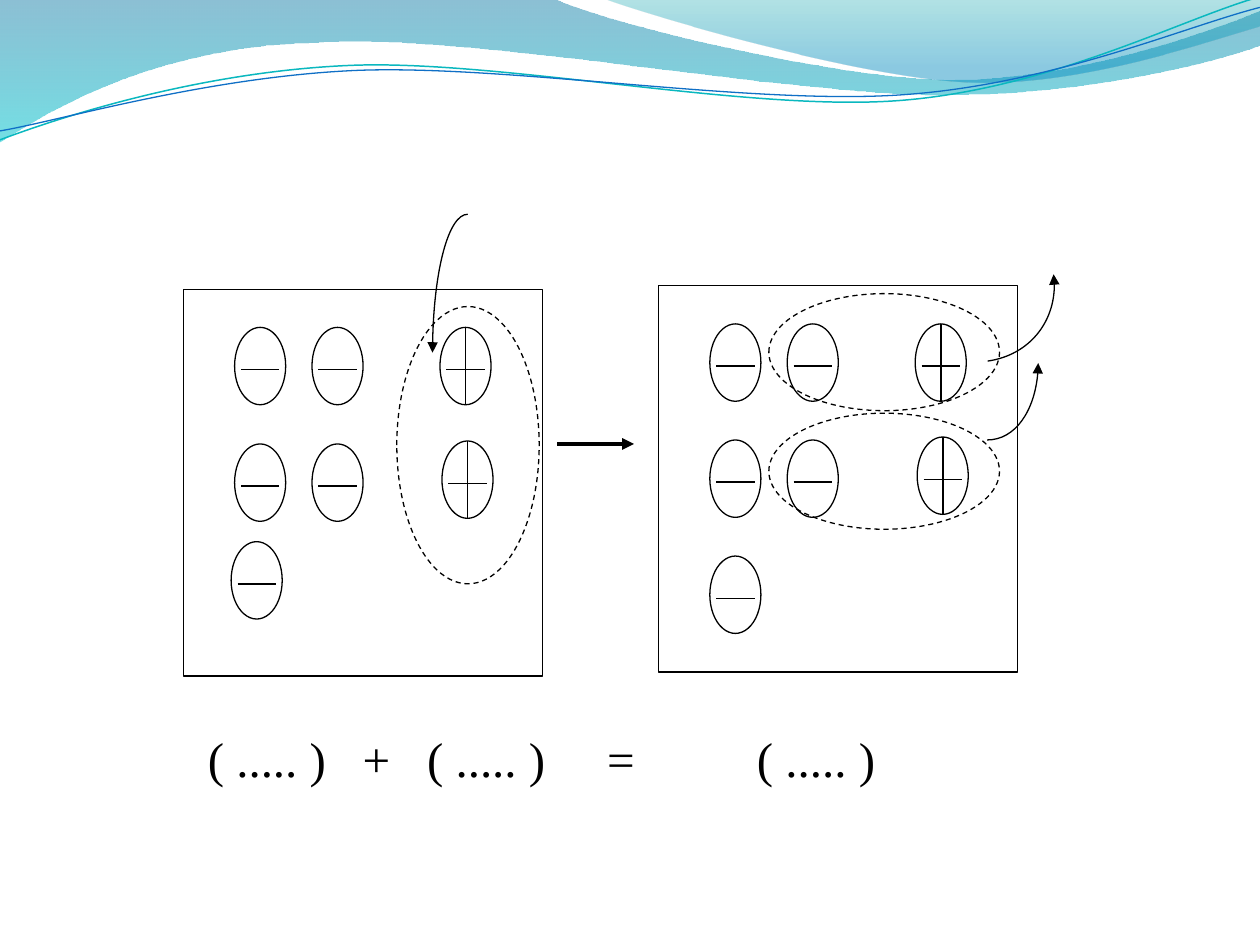
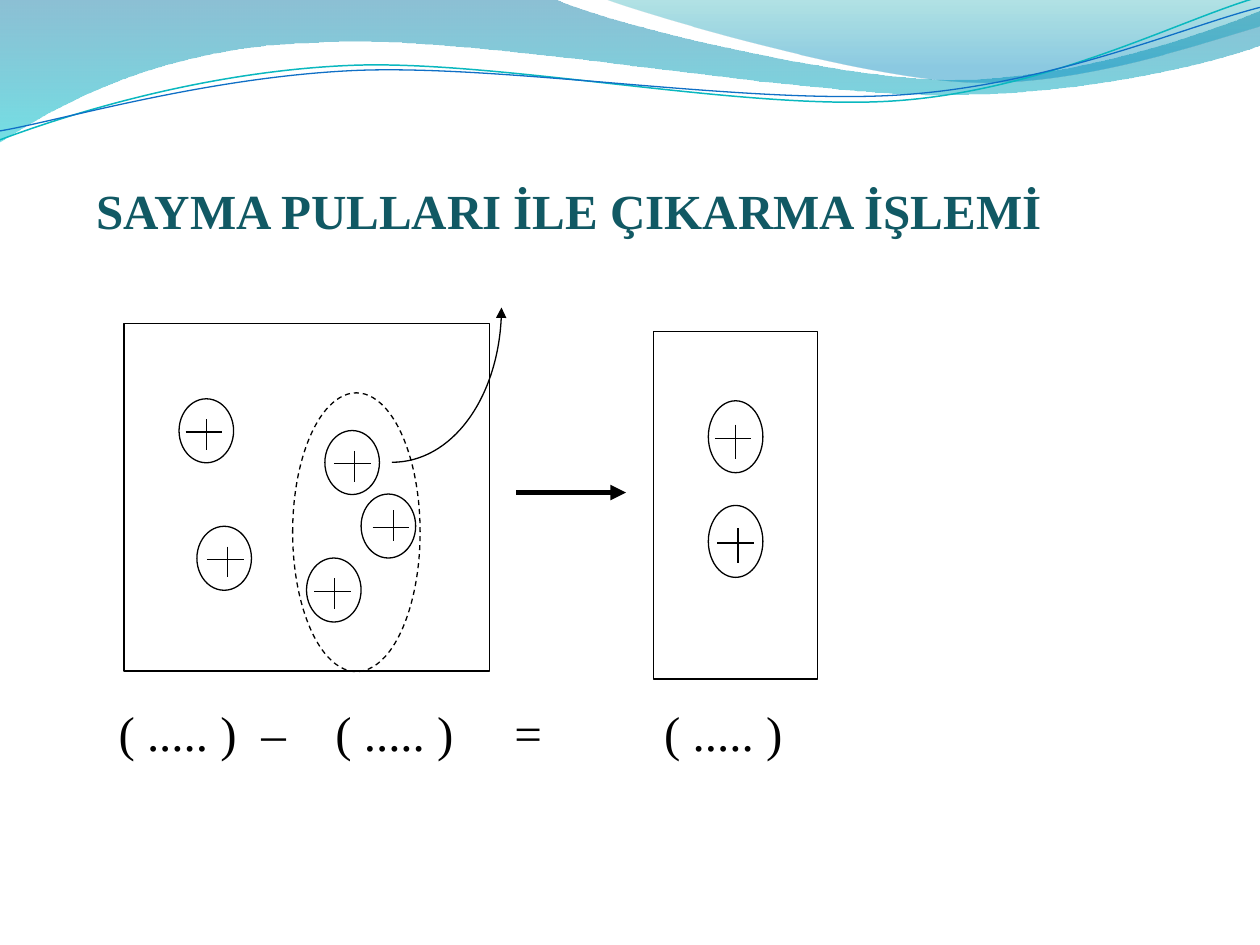
from lxml.etree import SubElement
from pptx import Presentation
from pptx.dml.color import RGBColor
from pptx.enum.dml import MSO_LINE
from pptx.enum.shapes import MSO_CONNECTOR, MSO_SHAPE
from pptx.enum.text import MSO_ANCHOR
from pptx.oxml.ns import qn
from pptx.util import Cm, Pt

COLORS = {
    "ink": "000000", "title": "115964",
    "deep": "0074A1", "turquoise": "00C6CF", "teal": "00A1A9", "sky": "008BBF",
    "teal line": "0AB8BF", "blue line": "0F6FC6",
}
FONT = "Times New Roman"


def add_curve(slide, start, segments, closed=False):
    """Draw segments of one point (straight) or three points (cubic Bézier)."""
    builder = slide.shapes.build_freeform(Cm(start[0]), Cm(start[1]), scale=1.0)
    builder.add_line_segments([(Cm(x), Cm(y)) for *_, (x, y) in segments], close=closed)
    shape = builder.convert_to_shape()
    shape.shadow.inherit = False
    shape.fill.background()
    pieces = list(shape._element.iter(qn("a:lnTo")))
    for piece, (*controls, _) in zip(pieces, segments):
        if controls:
            piece.tag = qn("a:cubicBezTo")
        for x, y in reversed(controls):
            point = SubElement(piece, qn("a:pt"),
                               x=str(Cm(x) - shape.left), y=str(Cm(y) - shape.top))
            piece.insert(0, point)
    return shape


def style_line(shape, color="ink", width=0.75, arrow=False, dashed=False):
    shape.line.color.rgb = RGBColor.from_string(COLORS[color])
    shape.line.width = Pt(width)
    if dashed:
        shape.line.dash_style = MSO_LINE.DASH
    if arrow:
        line = shape._element.spPr.find(qn("a:ln"))
        SubElement(line, qn("a:tailEnd"), type="triangle")


# Wave header: outline, then gradient stops (position, colour, opacity in %)
BANDS = [
    ((0, 0), [
        [(11.18, -0.02)],
        [(12.09, 0.43), (16.87, 1.6), (19.25, 1.6)],
        [(21.67, 1.6), (24.33, 0.66), (25.4, 0.23)],
        [(25.42, 0.91)],
        [(24.97, 1.12), (22.1, 1.93), (18.95, 1.91)],
        [(15.8, 1.91), (9.7, 0.71), (6.53, 0.86)],
        [(3.28, 0.91), (1.17, 2.11), (-0.02, 2.87)],
    ], [(0, "deep", 45), (1, "turquoise", 55)]),
    ((12.17, -0.02), [
        [(12.93, 0.28), (17.32, 1.57), (19.53, 1.65)],
        [(21.74, 1.75), (24.41, 0.81), (25.4, 0.53)],
        [(25.4, 0)],
    ], [(0, "teal", 30), (0.8, "sky", 45)]),
]
WAVE_LINES = [
    ((0, 2.82), [
        [(1.22, 2.36), (4.01, 1.45), (7.04, 1.32)],
        [(10.03, 1.19), (15.06, 2.26), (18.11, 2.03)],
        [(21.16, 1.8), (23.83, 0.38), (25.35, -0.05)],
    ], "teal line", 0.85),
    ((0, 2.64), [
        [(1.19, 2.44), (4.17, 1.55), (7.19, 1.42)],
        [(10.24, 1.3), (15.16, 2.13), (18.21, 1.91)],
        [(21.23, 1.7), (23.9, 0.53), (25.4, 0.15)],
    ], "blue line", 0.75),
]

# Counters: left, top, width, height and bars given from the counter's corner
minus_bar = (0.13, 0.85, 0.9, 0.85)
plus_bar = (0.52, 0, 0.52, 1.56)
addition_counters = []
for positions, bars in [
    ([(x, y) for x in (4.73, 6.29) for y in (6.6, 8.95)] + [(4.66, 10.92)], [minus_bar]),
    ([(x, y) for x in (14.31, 15.87) for y in (6.53, 8.87)] + [(14.31, 11.21)], [minus_bar]),
    ([(8.87, 6.6), (8.91, 8.89), (18.45, 6.53), (18.49, 8.81)], [minus_bar, plus_bar]),
]:
    addition_counters += [(x, y, 1.03, 1.56, bars) for x, y in positions]

# Here each plus sign sits a little off the counter's centre
subtraction_counters = []
for height, middle, top, length, positions in [
    (1.29, 0.67, 0.41, 0.62, [(3.61, 8.04, 0.13, 0), (6.55, 8.68, 0.18, 0),
                              (3.97, 10.61, 0.2, 0), (7.28, 9.96, 0.23, -0.08),
                              (6.18, 11.25, 0.15, 0)]),
    (1.45, 0.76, 0.48, 0.7, [(14.28, 8.08, 0.13, 0), (14.28, 10.19, 0.18, -0.02)]),
]:
    for x, y, shift, rise in positions:
        bars = [(shift, middle, shift + 0.74, middle),
                (shift + 0.42, top + rise, shift + 0.42, top + rise + length)]
        subtraction_counters.append((x, y, 1.1, height, bars))

SLIDES = [
    {
        "boxes": [(3.7, 5.83, 7.24, 7.8), (13.28, 5.75, 7.24, 7.8)],
        "counters": addition_counters,
        "loops": [(8, 6.18, 2.87, 5.59), (15.5, 5.92, 4.65, 2.36), (15.5, 8.33, 4.65, 2.34)],
        "moves": [
            ((9.43, 4.32), [(9.04, 4.32), (8.72, 5.56), (8.72, 7.11)]),
            ((19.9, 8.87), [(20.47, 8.87), (20.93, 8.18), (20.93, 7.32)]),
            ((19.91, 7.28), [(20.75, 7.16), (21.36, 6.38), (21.24, 5.53)]),
        ],
        "arrow": (11.23, 8.95, 12.78, 8.95, 2.25),
        "equation": (3.69, 14.57, 16.38, "+", (3.12, 4.42, 8.05, 11.07)),
    },
    {
        "title": "SAYMA PULLARI İLE ÇIKARMA İŞLEMİ",
        "boxes": [(2.5, 6.52, 7.37, 7.01), (13.18, 6.68, 3.3, 7.01)],
        "counters": subtraction_counters,
        "loops": [(5.9, 7.92, 2.57, 5.62)],
        "moves": [((7.9, 9.32), [(9.12, 9.32), (10.11, 7.92), (10.11, 6.2)])],
        "arrow": (10.41, 9.93, 12.62, 9.93, 3),
        "equation": (1.89, 14.04, 15.8, "–", (2.88, 4.37, 7.98, 11)),
    },
]

presentation = Presentation()
presentation.slide_width, presentation.slide_height = Cm(25.4), Cm(19.05)
slides = [presentation.slides.add_slide(presentation.slide_layouts[6]) for _ in SLIDES]

# The header is drawn once and moved to the master that all slides share
header = []
for start, segments, stops in BANDS:
    band = add_curve(slides[0], start, segments, closed=True)
    band.line.fill.background()
    band.fill.gradient()
    band.fill.gradient_angle = 270
    for stop, (position, color, _) in zip(band.fill.gradient_stops, stops):
        stop.position = position
        stop.color.rgb = RGBColor.from_string(COLORS[color])
    for element, (_, _, opacity) in zip(band._element.iter(qn("a:srgbClr")), stops):
        SubElement(element, qn("a:alpha"), val=str(opacity * 1000))
    header.append(band)
for start, segments, color, width in WAVE_LINES:
    wave = add_curve(slides[0], start, segments)
    style_line(wave, color, width)
    header.append(wave)
for shape in header:
    presentation.slide_master.shapes._spTree.append(shape._element)

for slide, content in zip(slides, SLIDES):
    outlines = [(MSO_SHAPE.RECTANGLE, box, False) for box in content["boxes"]]
    outlines += [(MSO_SHAPE.OVAL, counter[:4], False) for counter in content["counters"]]
    outlines += [(MSO_SHAPE.OVAL, loop, True) for loop in content["loops"]]
    for kind, place, dashed in outlines:
        shape = slide.shapes.add_shape(kind, *map(Cm, place))
        shape.shadow.inherit = False
        shape.fill.background()
        style_line(shape, dashed=dashed)

    lines = [(x + x1, y + y1, x + x2, y + y2, 0.75, False)
             for x, y, _, _, bars in content["counters"] for x1, y1, x2, y2 in bars]
    lines.append((*content["arrow"], True))
    for *ends, width, arrow in lines:
        connector = slide.shapes.add_connector(MSO_CONNECTOR.STRAIGHT, *map(Cm, ends))
        style_line(connector, width=width, arrow=arrow)
        SubElement(connector._element.spPr, qn("a:effectLst"))

    for start, bend in content["moves"]:
        style_line(add_curve(slide, start, [bend]), arrow=True)

    left, top, width, sign, tabs = content["equation"]
    blank = "( ..... )"
    texts = [("\t".join([blank, sign, blank, "=", blank]),
              (left, top, width, 1.45), 0.5, "ink", False, tabs)]
    if "title" in content:
        texts.append((content["title"], (1.7, 2.36, 20.02, 2.64), 0.25, "title", True, ()))
    for text, place, inset, color, is_title, tabs in texts:
        text_box = slide.shapes.add_textbox(*map(Cm, place))
        frame = text_box.text_frame
        frame.word_wrap = not is_title
        frame.margin_left = Cm(inset)
        if is_title:
            frame.vertical_anchor = MSO_ANCHOR.BOTTOM
            frame.margin_bottom = Cm(0.18)
        paragraph = frame.paragraphs[0]
        run = paragraph.add_run()
        run.text = text
        run.font.name, run.font.size, run.font.bold = FONT, Pt(28), is_title
        run.font.color.rgb = RGBColor.from_string(COLORS[color])
        if tabs:
            tab_list = SubElement(paragraph._p.get_or_add_pPr(), qn("a:tabLst"))
            for tab in tabs:
                SubElement(tab_list, qn("a:tab"), pos=str(Cm(tab)), algn="l")

presentation.save("out.pptx")
